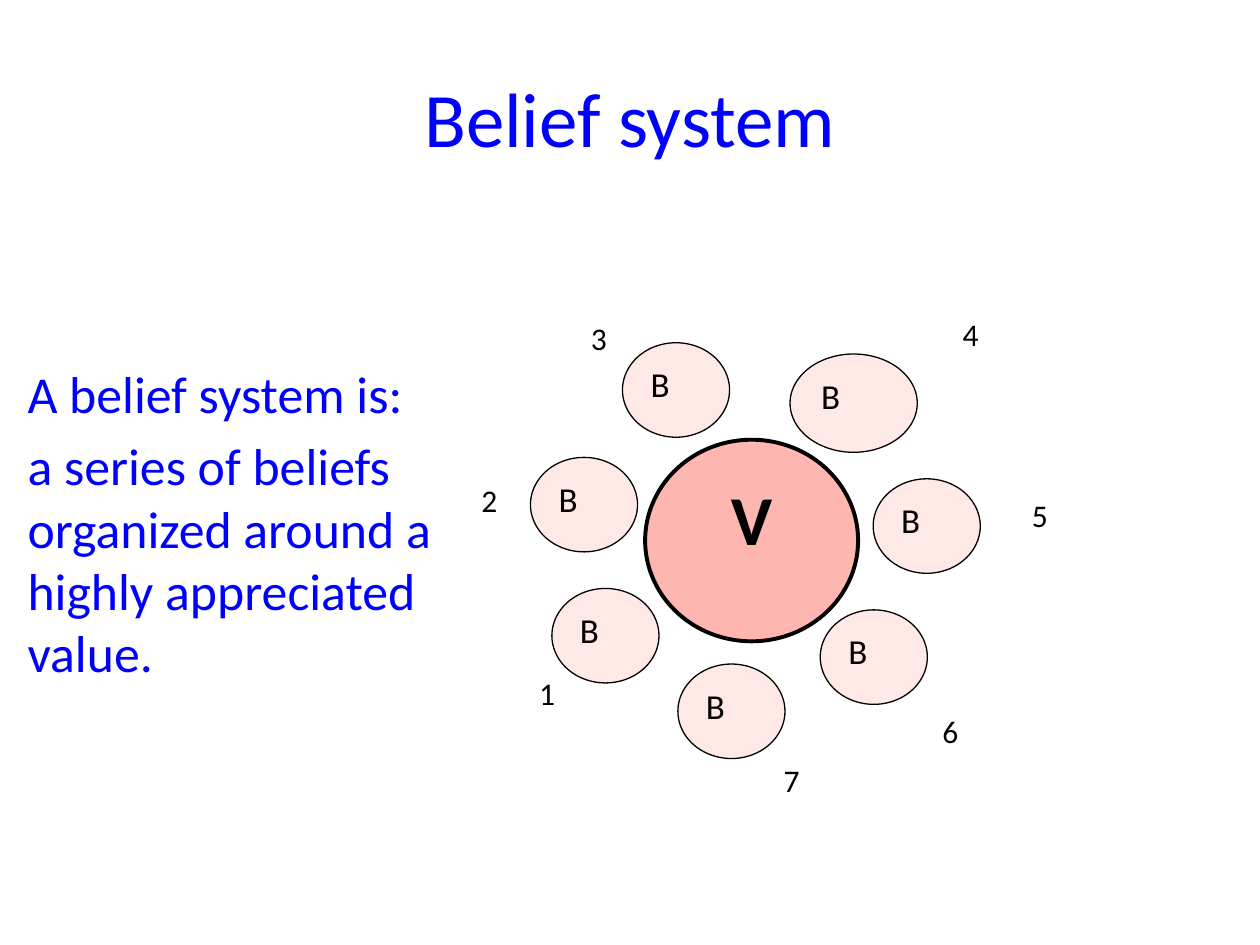
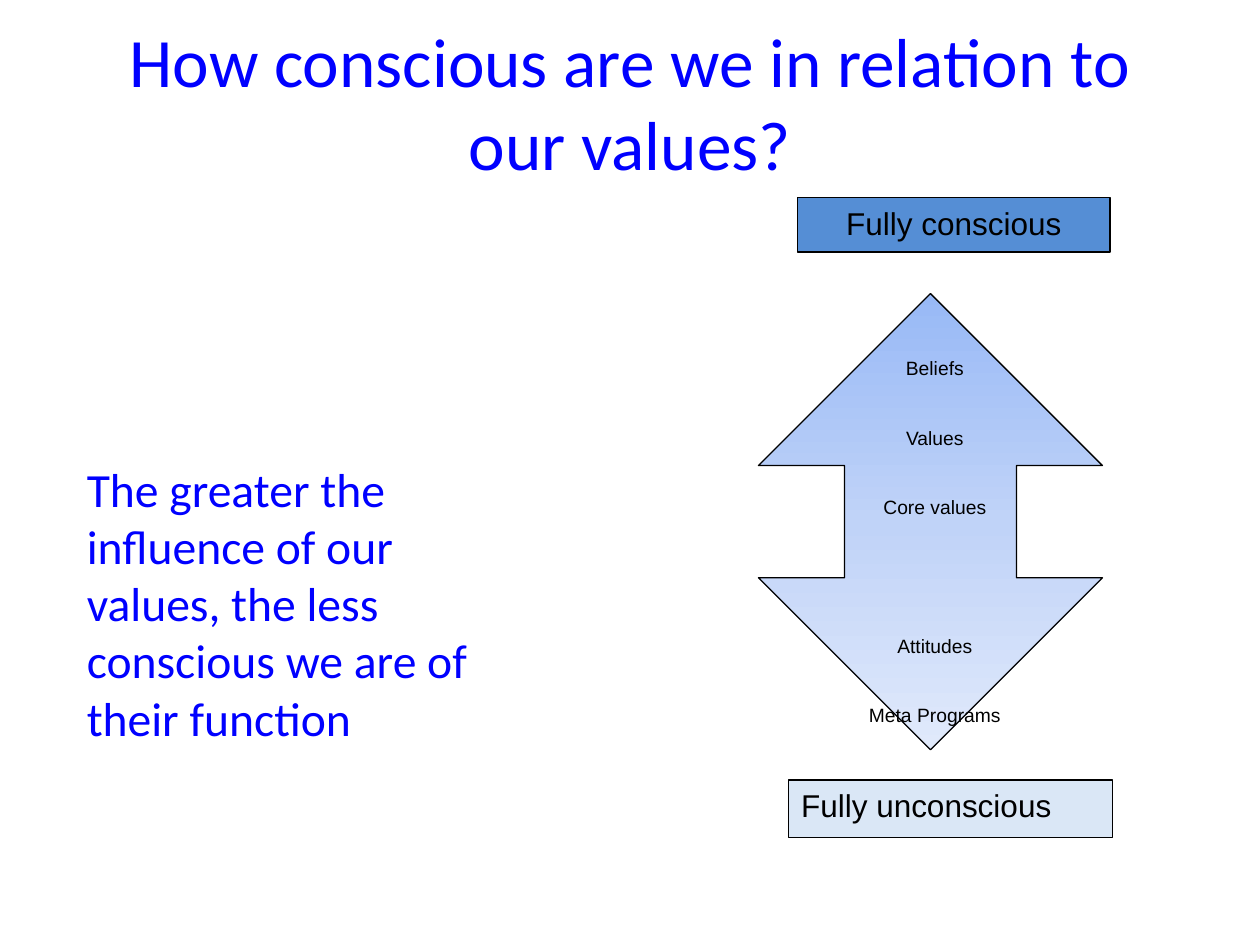
from copy import deepcopy

from pptx import Presentation
from pptx import util as u
from pptx.dml.color import RGBColor
from pptx.enum import shapes, text
from pptx.oxml.ns import qn

PX = 9144
SHAPE = shapes.MSO_SHAPE
ANCHOR = text.MSO_ANCHOR
CENTER = text.PP_ALIGN.CENTER
COLORS = {
    "blue": "0000FF", "black": "000000", "white": "FFFFFF",
    "value": "FEB6B0", "belief": "FFE9E7",
    "conscious": "558ED5", "unconscious": "DAE7F6",
    "arrow_top": "98B9F6", "arrow_middle": "C0D3F8", "arrow_bottom": "E0E9FB",
}
HEADING = {"name": "Calibri", "color": "blue"}
LABEL = {"name": "Calibri", "color": "black"}
ARIAL = {"name": "Arial", "color": "black"}


def rgb(name):
    return RGBColor.from_string(COLORS[name])


def emu(*lengths):
    return [u.Emu(length * PX) for length in lengths]


def write(s, lines, size, font, anchor=ANCHOR.TOP, align=text.PP_ALIGN.LEFT,
          spacing=1.0, inset=None):
    tf = s.text_frame
    tf.word_wrap = True
    tf.vertical_anchor = anchor
    if inset is not None:
        for side in ("left", "top", "right", "bottom"):
            setattr(tf, f"margin_{side}", u.Emu(inset * PX))
    for i, (line, before) in enumerate(lines):
        p = tf.paragraphs[0] if i == 0 else tf.add_paragraph()
        layout = {"alignment": align, "line_spacing": spacing,
                  "space_before": u.Pt(before)}
        for name, value in layout.items():
            setattr(p, name, value)
        r = p.add_run()
        r.text = line
        r.font.size = u.Pt(size)
        for name, value in font.items():
            if name == "color":
                r.font.color.rgb = rgb(value)
            else:
                setattr(r.font, name, value)


def add_text(slide, box, lines, size, font, **layout):
    write(slide.shapes.add_textbox(*emu(*box)), lines, size, font, **layout)


def add_outlined(slide, kind, box, fill=None, line="black", width=0.75):
    s = slide.shapes.add_shape(kind, *emu(*box))
    s.shadow.inherit = False
    if fill:
        s.fill.solid()
        s.fill.fore_color.rgb = rgb(fill)
    s.line.color.rgb = rgb(line)
    s.line.width = u.Pt(width)
    return s


def add_title(slide, box, title, size):
    add_text(slide, box, [(title, 0)], size, HEADING,
             anchor=ANCHOR.MIDDLE, align=CENTER)


def add_body(slide, box, paragraphs, size):
    lines = [(line, 6 if i else 0) for i, line in enumerate(paragraphs)]
    add_text(slide, box, lines, size, HEADING)


def belief_wheel(slide, left, top):
    numbers = [(46, 285), (0, 132), (87, 3), (382, 0), (437, 144), (366, 315), (240, 354)]
    beliefs = [(56, 217), (39, 113), (112, 22), (245, 31, 101, 78),
               (311, 130), (269, 234), (156, 277)]
    for number, (x, y) in enumerate(numbers, 1):
        s = add_outlined(slide, SHAPE.RECTANGLE, (left + x, top + y, 27, 47), "white", "white")
        write(s, [(str(number), 0)], 18, LABEL, inset=0)
    s = add_outlined(slide, SHAPE.OVAL, (left + 130, top + 99, 169, 160), "value", width=2.25)
    write(s, [("V", 0)], 40, {**LABEL, "bold": True}, align=CENTER)
    for x, y, *size in beliefs:
        w, h = size or (85, 75)
        s = add_outlined(slide, SHAPE.OVAL, (left + x, top + y, w, h), "belief")
        write(s, [("B", 0)], 20, LABEL)


def consciousness_scale(slide, left, top):
    arrow = add_outlined(slide, SHAPE.UP_DOWN_ARROW, (left, top + 76, 273, 362))
    head, shaft = 0.2, 0.5
    arrow.adjustments[0], arrow.adjustments[1] = head, shaft
    arrow.fill.gradient()
    arrow.fill.gradient_angle = 270
    first = arrow._element.spPr.find(".//" + qn("a:gs"))
    first.addnext(deepcopy(first))
    for i, name in enumerate(("arrow_top", "arrow_middle", "arrow_bottom")):
        stop = arrow.fill.gradient_stops[i]
        stop.position = i / 2
        stop.color.rgb = rgb(name)

    ends = [("Fully conscious", (31, 0, 248, 43), "conscious", CENTER),
            ("Fully unconscious", (24, 462, 257, 46), "unconscious", text.PP_ALIGN.LEFT)]
    for label, (x, y, w, h), fill, align in ends:
        s = add_outlined(slide, SHAPE.RECTANGLE, (left + x, top + y, w, h), fill)
        write(s, [(label, 0)], 18, ARIAL, align=align)

    levels = [("Beliefs", 0), ("Values", 0), ("Core values", 0),
              ("Attitudes", 39.7), ("Meta Programs", 0)]
    add_text(slide, (left + 63, top + 83, 154, 343), levels, 11, ARIAL,
             anchor=ANCHOR.MIDDLE, align=CENTER, spacing=3.0)


def belief_system_slide(slide):
    add_title(slide, (50, 30, 900, 125), "Belief system", 44)
    add_body(slide, (12, 282, 362, 268), [
        "A belief system is:",
        "a series of beliefs organized around a highly appreciated value.",
    ], 29.6)
    belief_wheel(slide, 382, 250)


def conscious_values_slide(slide):
    add_title(slide, (50, 30, 900, 101),
              "How conscious are we in relation to our values?", 39.6)
    add_body(slide, (59, 360, 332, 192), [
        "The greater the influence of our values, the less conscious we are of their function",
    ], 27.2)
    consciousness_scale(slide, 602, 157)


def main():
    prs = Presentation()
    prs.slide_width, prs.slide_height = emu(1000, 750)
    for build in (belief_system_slide, conscious_values_slide):
        build(prs.slides.add_slide(prs.slide_layouts[6]))
    prs.save("out.pptx")


if __name__ == "__main__":
    main()
